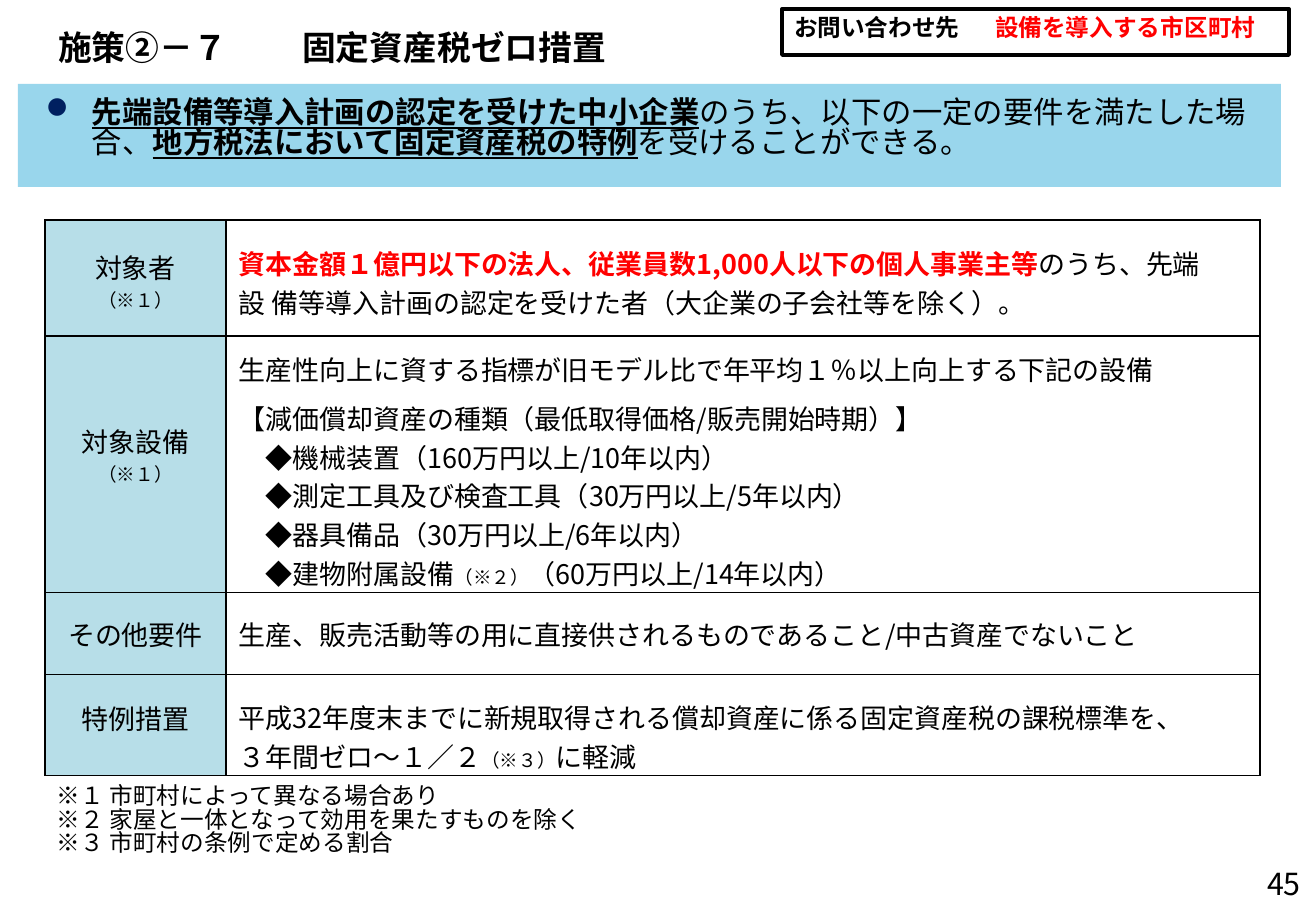
from lxml import etree
from pptx import Presentation
from pptx.dml.color import RGBColor
from pptx.enum.shapes import MSO_SHAPE
from pptx.enum.text import MSO_ANCHOR, MSO_AUTO_SIZE, PP_ALIGN
from pptx.oxml.ns import qn
from pptx.util import Pt

RECT = MSO_SHAPE.RECTANGLE
TOP = MSO_ANCHOR.TOP
NO_FIT = MSO_AUTO_SIZE.NONE
LEFT, CENTER = PP_ALIGN.LEFT, PP_ALIGN.CENTER

FONT = "Noto Sans CJK JP"
COLORS = {"black": "000000", "red": "FF0000", "band": "99D6EC",
          "label": "B7DEE8", "bullet": "002060"}
PX = 914400 / 121.5  # EMU per px

# Content: a paragraph is a list of (text, style) runs
PLAIN, BOLD = {}, {"bold": True}
KEY = {"bold": True, "underline": True}
ALERT = {"bold": True, "color": "red"}
SMALL = {"size": 11}

TITLE = [("施策②－７\t固定資産税ゼロ措置", BOLD)]
CONTACT = [("お問い合わせ先\t", BOLD), ("設備を導入する市区町村", ALERT)]
SUMMARY = [
    ("先端設備等導入計画の認定を受けた中小企業", KEY),
    ("のうち、以下の一定の要件を満たした場 合、", PLAIN),
    ("地方税法において固定資産税の特例", KEY),
    ("を受けることができる。", PLAIN),
]
NOTES = [
    "※１ 市町村によって異なる場合あり",
    "※２ 家屋と一体となって効用を果たすものを除く",
    "※３ 市町村の条例で定める割合",
]
PAGE = [("45", PLAIN)]
NOTE_1 = [("（※１）", SMALL)]

# Rows: height, label top inset, label, body top inset, body
ROWS = [
    (116, 27, [[("対象者", PLAIN)], NOTE_1], 23, [
        [("資本金額１億円以下の法人、従業員数1,000人以下の個人事業主等", ALERT),
         ("のうち、先端設 備等導入計画の認定を受けた者（大企業の子会社等を除く）。", PLAIN)],
    ]),
    (256, 85, [[("対象設備", PLAIN)], NOTE_1], 13, [
        [("生産性向上に資する指標が旧モデル比で年平均１％以上向上する下記の設備", PLAIN)],
        [("【減価償却資産の種類（最低取得価格/販売開始時期）】", PLAIN)],
        [("◆機械装置（160万円以上/10年以内）", PLAIN)],
        [("◆測定工具及び検査工具（30万円以上/5年以内）", PLAIN)],
        [("◆器具備品（30万円以上/6年以内）", PLAIN)],
        [("◆建物附属設備", PLAIN), ("（※２）", SMALL), ("（60万円以上/14年以内）", PLAIN)],
    ]),
    (82, 22, [[("その他要件", PLAIN)]], 22, [
        [("生産、販売活動等の用に直接供されるものであること/中古資産でないこと", PLAIN)],
    ]),
    (101, 24, [[("特例措置", PLAIN)]], 23, [
        [("平成32年度末までに新規取得される償却資産に係る固定資産税の課税標準を、", PLAIN)],
        [("３年間ゼロ～１／２", PLAIN), ("（※３）", SMALL), ("に軽減", PLAIN)],
    ]),
]
COLS = (181, 1034)


def px(n):
    return round(n * PX)


def rgb(name):
    return RGBColor.from_string(COLORS[name])


def sub(parent, tag, **attrs):
    return etree.SubElement(parent, qn(tag), {k: str(v) for k, v in attrs.items()})


def add_runs(p, runs, size, align=LEFT, before=0, line=1.0):
    p.alignment = align
    p.space_before = Pt(before)
    p.line_spacing = line
    for text, style in runs:
        r = p.add_run()
        r.text = text
        f = r.font
        f.size = Pt(style.get("size", size))
        f.bold = style.get("bold", False)
        f.underline = style.get("underline", False)
        f.color.rgb = rgb(style.get("color", "black"))
        f.name = FONT
        sub(r._r.get_or_add_rPr(), "a:ea", typeface=FONT)


def indent(p, left, first=0):
    pPr = p._p.get_or_add_pPr()
    pPr.set("marL", str(px(left)))
    pPr.set("indent", str(px(first)))
    return pPr


def add_tab(p, pos):
    sub(sub(p._p.get_or_add_pPr(), "a:tabLst"), "a:tab", pos=px(pos), algn="l")


def set_frame(shape, left=0, top=0, right=0):
    tf = shape.text_frame
    tf.word_wrap = True
    tf.auto_size = NO_FIT
    tf.vertical_anchor = TOP
    tf.margin_left, tf.margin_top = px(left), px(top)
    tf.margin_right, tf.margin_bottom = px(right), 0
    return tf


def place(shape, x, y, w, h):
    shape.left, shape.top, shape.width, shape.height = map(px, (x, y, w, h))


def fill_cell(cell, paras, left, top, right, align):
    cell.margin_left, cell.margin_top = px(left), px(top)
    cell.margin_right, cell.margin_bottom = px(right), 0
    cell.vertical_anchor = TOP
    tf = cell.text_frame
    for i, runs in enumerate(paras):
        p = tf.add_paragraph() if i else tf.paragraphs[0]
        heading = runs[0][0].startswith("【")
        add_runs(p, runs, 16, align, before=6 if heading else 0)
        if runs[0][0].startswith("◆"):
            indent(p, 27)
    tcPr = cell._tc.get_or_add_tcPr()
    for i, side in enumerate(("a:lnL", "a:lnR", "a:lnT", "a:lnB")):
        ln = etree.Element(qn(side), w=str(Pt(1)))
        sub(sub(ln, "a:solidFill"), "a:srgbClr", val=COLORS["black"])
        tcPr.insert(i, ln)


prs = Presentation()
prs.slide_width, prs.slide_height = px(1316), px(911)
s = prs.slides.add_slide(prs.slide_layouts[1])

# Title
title = s.shapes.title
place(title, 57, 26, 611, 43)
p = set_frame(title, left=1, top=1).paragraphs[0]
add_runs(p, TITLE, 20)
add_tab(p, 244)

# Summary band
band = s.placeholders[1]
place(band, 18, 84, 1263, 103)
band.fill.solid()
band.fill.fore_color.rgb = rgb("band")
p = set_frame(band, top=15, right=20).paragraphs[0]
add_runs(p, SUMMARY, 18, line=0.83)
pPr = indent(p, 74, -46)
sub(sub(pPr, "a:buClr"), "a:srgbClr", val=COLORS["bullet"])
sub(pPr, "a:buFont", typeface="Wingdings")
sub(pPr, "a:buChar", char="l")

# Contact box
contact = s.shapes.add_shape(RECT, px(782), px(9), px(507), px(46))
contact.shadow.inherit = False
contact.fill.background()
contact.line.color.rgb = rgb("black")
contact.line.width = Pt(2.28)
p = set_frame(contact, left=12, top=4).paragraphs[0]
add_runs(p, CONTACT, 14)
add_tab(p, 201)

# Requirements table
heights = [row[0] for row in ROWS]
table = s.shapes.add_table(len(ROWS), len(COLS), px(45), px(220),
                           px(sum(COLS)), px(sum(heights))).table
table.first_row = table.horz_banding = False
for col, width in zip(table.columns, COLS):
    col.width = px(width)
for i, (height, label_top, label, body_top, body) in enumerate(ROWS):
    table.rows[i].height = px(height)
    label_cell, body_cell = table.cell(i, 0), table.cell(i, 1)
    label_cell.fill.solid()
    label_cell.fill.fore_color.rgb = rgb("label")
    body_cell.fill.background()
    fill_cell(label_cell, label, 0, label_top, 0, CENTER)
    fill_cell(body_cell, body, 13, body_top, 40, LEFT)

# Footnotes
notes = s.shapes.add_textbox(px(56), px(780), px(532), px(89))
tf = set_frame(notes, left=1, top=6)
for i, note in enumerate(NOTES):
    p = tf.add_paragraph() if i else tf.paragraphs[0]
    add_runs(p, [(note, PLAIN)], 14, line=0.83)

# Page number
page = s.shapes.add_textbox(px(1266), px(865), px(45), px(42))
add_runs(set_frame(page, left=1).paragraphs[0], PAGE, 18)

prs.save("out.pptx")
